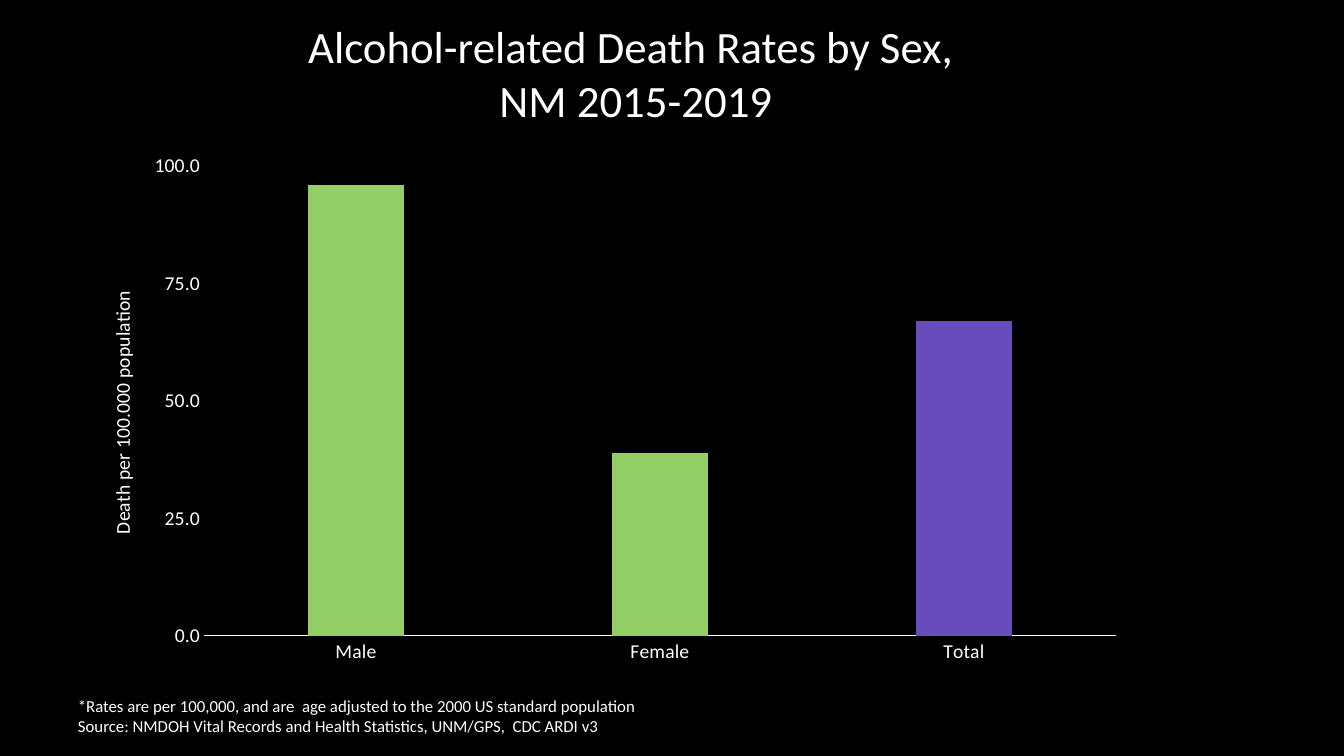
from dataclasses import dataclass

from lxml import etree
from pptx import Presentation
from pptx.chart.data import CategoryChartData
from pptx.dml.color import RGBColor
from pptx.enum.chart import XL_CHART_TYPE as ChartType, XL_TICK_MARK as TickMark
from pptx.enum.text import MSO_AUTO_SIZE as AutoSize, PP_ALIGN as Align
from pptx.oxml.ns import qn
from pptx.util import Emu, Pt

PX = 914400 / 100.8


@dataclass(frozen=True)
class Theme:
    font: str = "Calibri"
    background: RGBColor = RGBColor(0x00, 0x00, 0x00)
    text: RGBColor = RGBColor(0xFF, 0xFF, 0xFF)
    sex_bar: RGBColor = RGBColor(0x94, 0xCE, 0x67)
    total_bar: RGBColor = RGBColor(0x67, 0x4D, 0xBB)
    title_size: Pt = Pt(32)
    chart_size: Pt = Pt(14)
    note_size: Pt = Pt(12)


@dataclass(frozen=True)
class Box:
    left: int
    top: int
    width: int
    height: int

    def emu(self):
        return [px(n) for n in (self.left, self.top, self.width, self.height)]


THEME = Theme()
RATES = {"Male": 96, "Female": 39, "Total": 67}


def px(count):
    return Emu(round(count * PX))


def style_font(font, size):
    font.name = THEME.font
    font.size = size
    font.color.rgb = THEME.text


def add_lines(slide, box, lines, size, alignment=Align.LEFT):
    text_box = slide.shapes.add_textbox(*box.emu())
    frame = text_box.text_frame
    frame.word_wrap = True
    frame.auto_size = AutoSize.SHAPE_TO_FIT_TEXT
    for index, line in enumerate(lines):
        paragraph = frame.add_paragraph() if index else frame.paragraphs[0]
        paragraph.text = line
        paragraph.alignment = alignment
        style_font(paragraph.font, size)


def place_in_chart(element, index, **settings):
    """Give a chart part a manual layout, as its child number index."""
    for old_layout in element.findall(qn("c:layout")):
        element.remove(old_layout)
    layout = etree.Element(qn("c:layout"))
    manual = etree.SubElement(layout, qn("c:manualLayout"))
    for name, value in settings.items():
        etree.SubElement(manual, qn(f"c:{name}")).set("val", str(value))
    element.insert(index, layout)


def style_category_axis(axis):
    axis.major_tick_mark = axis.minor_tick_mark = TickMark.NONE
    axis.format.line.color.rgb = THEME.text
    axis.format.line.width = Pt(0.75)
    style_font(axis.tick_labels.font, THEME.chart_size)


def style_value_axis(axis):
    axis.minimum_scale, axis.maximum_scale, axis.major_unit = 0, 100, 25
    axis.has_major_gridlines = False
    axis.major_tick_mark = axis.minor_tick_mark = TickMark.NONE
    axis.format.line.fill.background()
    axis.tick_labels.number_format = "0.0"
    axis.tick_labels.number_format_is_linked = False
    style_font(axis.tick_labels.font, THEME.chart_size)
    paragraph = axis.axis_title.text_frame.paragraphs[0]
    paragraph.text = "Death per 100.000 population"
    paragraph.font.bold = False
    style_font(paragraph.font, THEME.chart_size)


def add_rate_chart(slide, box):
    data = CategoryChartData(number_format="0.0")
    data.categories = list(RATES)
    data.add_series("Series 1", list(RATES.values()))
    chart = slide.shapes.add_chart(ChartType.COLUMN_CLUSTERED, *box.emu(), data).chart
    chart.has_legend = chart.has_title = False
    style_font(chart.font, THEME.chart_size)
    style_category_axis(chart.category_axis)
    style_value_axis(chart.value_axis)

    plot = chart.plots[0]
    plot.vary_by_categories = False
    plot.gap_width, plot.overlap = 219, -27
    series = plot.series[0]
    for format_, color in ((series.format, THEME.sex_bar),
                           (series.points[2].format, THEME.total_bar)):
        format_.fill.solid()
        format_.fill.fore_color.rgb = color

    space = chart._chartSpace
    place_in_chart(space.xpath(".//c:plotArea")[0], 0, layoutTarget="inner",
                   xMode="edge", yMode="edge",
                   x=124 / box.width, y=23 / box.height,
                   w=912 / box.width, h=470 / box.height)
    axis_title = space.xpath(".//c:valAx/c:title")[0]
    place_in_chart(axis_title, 1, xMode="edge", yMode="edge",
                   x=25 / box.width, y=144 / box.height)
    body = axis_title.xpath(".//a:bodyPr")[0]
    body.set("rot", "-5400000")
    body.set("vert", "horz")


def build_rate_slide(presentation):
    slide = presentation.slides.add_slide(presentation.slide_layouts[6])
    slide.background.fill.solid()
    slide.background.fill.fore_color.rgb = THEME.background
    add_lines(slide, Box(68, 691, 672, 50), [
        "*Rates are per 100,000, and are  age adjusted to the 2000 US standard population",
        "Source: NMDOH Vital Records and Health Statistics, UNM/GPS,  CDC ARDI v3",
    ], THEME.note_size)
    add_rate_chart(slide, Box(80, 143, 1058, 533))
    add_lines(slide, Box(92, 14, 1088, 119),
              ["Alcohol-related Death Rates by Sex, ", "NM 2015-2019"],
              THEME.title_size, Align.CENTER)


def main():
    presentation = Presentation()
    presentation.slide_width, presentation.slide_height = px(1344), px(756)
    build_rate_slide(presentation)
    presentation.save("out.pptx")


if __name__ == "__main__":
    main()
